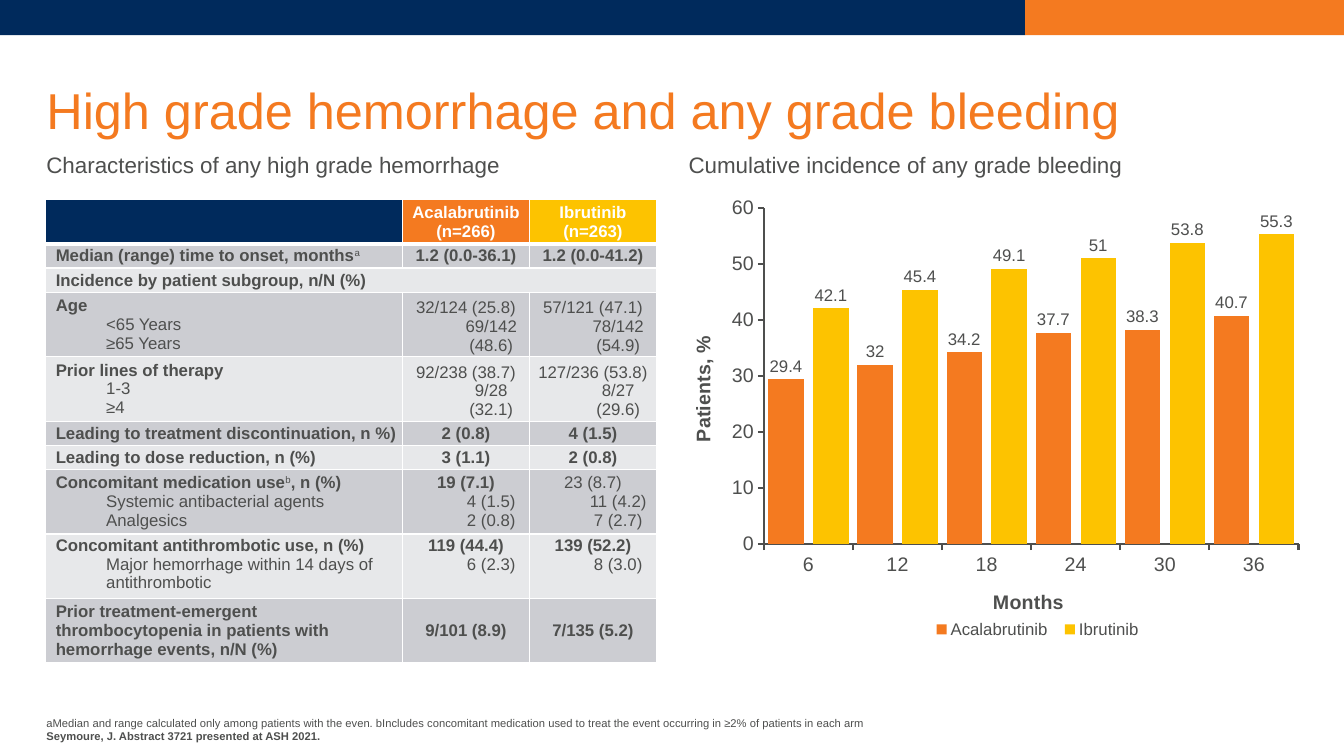
"""Builds the slide on hemorrhage and bleeding under two treatments."""
from lxml import etree
from pptx import Presentation
from pptx.chart.data import CategoryChartData
from pptx.dml.color import RGBColor
from pptx.enum.chart import XL_CHART_TYPE, XL_LABEL_POSITION, XL_LEGEND_POSITION, XL_TICK_MARK
from pptx.enum.shapes import MSO_SHAPE
from pptx.enum.text import MSO_ANCHOR, PP_ALIGN
from pptx.oxml.ns import qn
from pptx.util import Inches, Pt

COLUMNS = XL_CHART_TYPE.COLUMN_CLUSTERED
OUTSIDE_END = XL_LABEL_POSITION.OUTSIDE_END
LEGEND_BOTTOM = XL_LEGEND_POSITION.BOTTOM
TICK_OUT, TICK_NONE = XL_TICK_MARK.OUTSIDE, XL_TICK_MARK.NONE
RECTANGLE = MSO_SHAPE.RECTANGLE
TOP, MIDDLE, BOTTOM = MSO_ANCHOR.TOP, MSO_ANCHOR.MIDDLE, MSO_ANCHOR.BOTTOM
LEFT, CENTER = PP_ALIGN.LEFT, PP_ALIGN.CENTER

COLORS = {"navy": "002A5C", "orange": "F47A20", "yellow": "FDC300", "text": "4E4F4E",
          "white": "FFFFFF", "dark band": "CCCDD2", "light band": "E7E8EA"}
FONT = "Arial"
DRUGS = [("Acalabrutinib", 266, "orange", (29.4, 32, 34.2, 37.7, 38.3, 40.7)),
         ("Ibrutinib", 263, "yellow", (42.1, 45.4, 49.1, 51, 53.8, 55.3))]
MONTHS = [str(month) for month in range(6, 37, 6)]
ROWS = [
    (3, MIDDLE, ["*Median (range) time to onset, months^a"], ["*1.2 (0.0-36.1)"], ["*1.2 (0.0-41.2)"]),
    (3, MIDDLE, ["*Incidence by patient subgroup, n/N (%)"]),
    (8, BOTTOM, ["*Age", "<65 Years", "≥65 Years"],
     ["32/124 (25.8)", "69/142 (48.6)"], ["57/121 (47.1)", "78/142 (54.9)"]),
    (8, BOTTOM, ["*Prior lines of therapy", "1-3", "≥4"],
     ["92/238 (38.7)", "9/28 (32.1)"], ["127/236 (53.8)", "8/27 (29.6)"]),
    (3, MIDDLE, ["*Leading to treatment discontinuation, n %)"], ["*2 (0.8)"], ["*4 (1.5)"]),
    (3, MIDDLE, ["*Leading to dose reduction, n (%)"], ["*3 (1.1)"], ["*2 (0.8)"]),
    (8, MIDDLE, ["*Concomitant medication use^b^, n (%)", "Systemic antibacterial agents", "Analgesics"],
     ["*19 (7.1)", "4 (1.5)", "2 (0.8)"], ["23 (8.7)", "11 (4.2)", "7 (2.7)"]),
    (8, TOP, ["*Concomitant antithrombotic use, n (%)", "Major hemorrhage within 14 days of antithrombotic"],
     ["*119 (44.4)", "6 (2.3)"], ["*139 (52.2)", "8 (3.0)"]),
    (8, MIDDLE, ["*Prior treatment-emergent thrombocytopenia in patients with hemorrhage events, n/N (%)"],
     ["*9/101 (8.9)"], ["*7/135 (5.2)"]),
]


def assign(target, values):
    """Set each named attribute of the target."""
    for name, value in values.items():
        setattr(target, name, value)


def place(parent, index, **numbers):
    """Give a chart part a manual layout in shares of the chart."""
    for old in parent.findall(qn("c:layout")):
        parent.remove(old)
    layout = etree.Element(qn("c:layout"))
    manual = etree.SubElement(layout, qn("c:manualLayout"))
    for name, value in numbers.items():
        etree.SubElement(manual, qn("c:" + name)).set("val", str(value))
    parent.insert(index, layout)


class Page:
    """Draws styled elements on one slide, measured in percent of its size."""

    def __init__(self, deck):
        self.deck = deck
        self.slide = deck.slides.add_slide(deck.slide_layouts[5])
        self.shapes = self.slide.shapes

    def across(self, share):
        """Convert a percentage of the width to a length."""
        return int(self.deck.slide_width * share / 100)

    def down(self, share):
        """Convert a percentage of the height to a length."""
        return int(self.deck.slide_height * share / 100)

    def area(self, left, top, width, height):
        """Convert four percentages to a position and size."""
        return self.across(left), self.down(top), self.across(width), self.down(height)

    def style(self, font, size, color="text", bold=False):
        """Format a font."""
        assign(font, {"name": FONT, "size": Pt(size), "bold": bold})
        font.color.rgb = RGBColor.from_string(COLORS[color])

    def paint(self, fill, color):
        """Make a fill solid."""
        fill.solid()
        fill.fore_color.rgb = RGBColor.from_string(COLORS[color])

    def fill_text(self, frame, lines, size, color="text", align=LEFT, spacing=1.0, indent=0):
        """Set lines of text; a leading * is bold and ^ toggles superscript."""
        for number, line in enumerate(lines):
            para = frame.paragraphs[0] if number == 0 else frame.add_paragraph()
            assign(para, {"alignment": align, "line_spacing": spacing})
            if number and indent:
                para.level = 1
                properties = para._p.get_or_add_pPr()
                properties.set("marL", str(self.across(indent)))
                properties.set("indent", "0")
            bold = line.startswith("*")
            for position, piece in enumerate(line.lstrip("*").split("^")):
                raised = position % 2 == 1
                span = para.add_run()
                span.text = piece
                self.style(span.font, size, color, bold and not raised)
                if raised:
                    span._r.get_or_add_rPr().set("baseline", "30000")

    def bar(self, area, color):
        """Draw a plain rectangle."""
        shape = self.shapes.add_shape(RECTANGLE, *self.area(*area))
        shape.shadow.inherit = False
        self.paint(shape.fill, color)
        shape.line.fill.background()

    def text(self, area, lines, size, anchor, box=None, color="text", spacing=1.0, inset=0):
        """Fill a new text box or a given placeholder."""
        left, top, width, height = self.area(*area)
        box = box or self.shapes.add_textbox(left, top, width, height)
        assign(box, {"left": left, "top": top, "width": width, "height": height})
        assign(box.text_frame, {"word_wrap": True, "vertical_anchor": anchor, "margin_left": 0,
                                "margin_right": 0, "margin_bottom": 0, "margin_top": Inches(inset)})
        self.fill_text(box.text_frame, lines, size, color, spacing=spacing)

    def cell(self, cell, fill, lines, anchor, column, color="text", edges=(1, 1)):
        """Border and fill one table cell and set its text."""
        properties = cell._tc.get_or_add_tcPr()
        for side, width in zip("LRTB", (1, 1, *edges)):
            line = etree.SubElement(properties, qn("a:ln" + side), w=str(Pt(width)))
            solid = etree.SubElement(line, qn("a:solidFill"))
            etree.SubElement(solid, qn("a:srgbClr"), val=COLORS["white"])
        self.paint(cell.fill, fill)
        assign(cell, {"vertical_anchor": anchor, "margin_left": Inches(0 if column else 0.1),
                      "margin_right": 0, "margin_top": Inches(0.02), "margin_bottom": Inches(0.02)})
        self.fill_text(cell.text_frame, lines, 12, color, CENTER if column else LEFT, indent=3.75)

    def table(self, area, widths, head_height):
        """Draw the table of hemorrhage characteristics."""
        table = self.shapes.add_table(len(ROWS) + 1, len(widths), *self.area(*area)).table
        table.horz_banding = False
        for column, width in zip(table.columns, widths):
            column.width = self.across(width)
        table.rows[0].height = self.down(head_height)
        self.cell(table.cell(0, 0), "navy", [], MIDDLE, 0, edges=(1, 3))
        for column, (name, count, color, _) in enumerate(DRUGS, 1):
            self.cell(table.cell(0, column), color, [f"*{name} (n={count})"], MIDDLE, column, "white", (1, 3))
        for number, (height, anchor, *cells) in enumerate(ROWS, 1):
            table.rows[number].height = self.down(height)
            if len(cells) == 1:
                table.cell(number, 0).merge(table.cell(number, len(widths) - 1))
            for column in range(len(widths)):
                self.cell(table.cell(number, column), "dark band" if number % 2 else "light band",
                          cells[column] if column < len(cells) else [],
                          anchor if column or anchor == TOP else MIDDLE, column,
                          edges=(3 if number == 1 else 1, 1))

    def axis(self, axis, title, left, top):
        """Format an axis and place its title."""
        assign(axis, {"has_major_gridlines": False, "major_tick_mark": TICK_OUT, "minor_tick_mark": TICK_NONE})
        self.style(axis.tick_labels.font, 14)
        axis.format.line.width = Pt(1.5)
        self.paint(axis.format.line.fill, "text")
        self.fill_text(axis.axis_title.text_frame, ["*" + title], 14)
        place(axis.axis_title._element, 1, xMode="edge", yMode="edge", x=left, y=top)

    def chart(self, area):
        """Draw the column chart of cumulative incidence."""
        data = CategoryChartData()
        data.categories = MONTHS
        for name, _, _, values in DRUGS:
            data.add_series(name, values)
        chart = self.shapes.add_chart(COLUMNS, *self.area(*area), data).chart
        assign(chart, {"has_title": False, "has_legend": True})
        self.style(chart.font, 10)
        self.axis(chart.category_axis, "Months", 0.5, 0.86)
        self.axis(chart.value_axis, "Patients, %", 0.03, 0.31)
        assign(chart.value_axis, {"minimum_scale": 0, "maximum_scale": 60, "major_unit": 10})
        chart.value_axis.axis_title.text_frame._txBody.bodyPr.set("rot", "-5400000")
        plot = chart.plots[0]
        assign(plot, {"gap_width": 25, "overlap": -27, "vary_by_categories": False})
        for series, (_, _, color, _) in zip(plot.series, DRUGS):
            self.paint(series.format.fill, color)
            assign(series.data_labels, {"show_value": True, "position": OUTSIDE_END})
            self.style(series.data_labels.font, 12)
        assign(chart.legend, {"position": LEGEND_BOTTOM, "include_in_layout": False})
        self.style(chart.legend.font, 12)
        place(chart.legend._element, 1, xMode="edge", yMode="edge", x=0.4, y=0.92, w=0.35, h=0.07)
        place(chart._chartSpace.chart.plotArea, 0, layoutTarget="inner", xMode="edge", yMode="edge",
              x=0.15, y=0.04, w=0.83, h=0.73)


def main():
    """Build and save the deck."""
    deck = Presentation()
    assign(deck, {"slide_width": Inches(13.33), "slide_height": Inches(7.5)})
    page = Page(deck)
    page.bar((0, 0, 76.28, 4.67), "navy")
    page.bar((76.28, 0, 23.72, 4.67), "orange")
    page.text((3.45, 92.67, 70.28, 5.6), [
        "aMedian and range calculated only among patients with the even. bIncludes concomitant medication "
        "used to treat the event occurring in ≥2% of patients in each arm",
        "*Seymoure, J. Abstract 3721 presented at ASH 2021."], 8, BOTTOM)
    for left, topic in ((3.45, "Characteristics of any high grade hemorrhage"),
                        (51.23, "Cumulative incidence of any grade bleeding")):
        page.text((left, 16.93, 45.38, 9.47), [topic], 16, MIDDLE, spacing=0.9, inset=0.04)
    page.table((3.4, 26.4, 45.45, 57.33), (26.55, 9.45, 9.45), 5.33)
    page.text((3.45, 5.47, 93.25, 13.07), ["High grade hemorrhage and any grade bleeding"], 36, BOTTOM,
              page.shapes.title, "orange", 0.9)
    page.chart((49.65, 25.07, 47.93, 60.93))
    deck.save("out.pptx")


if __name__ == "__main__":
    main()
